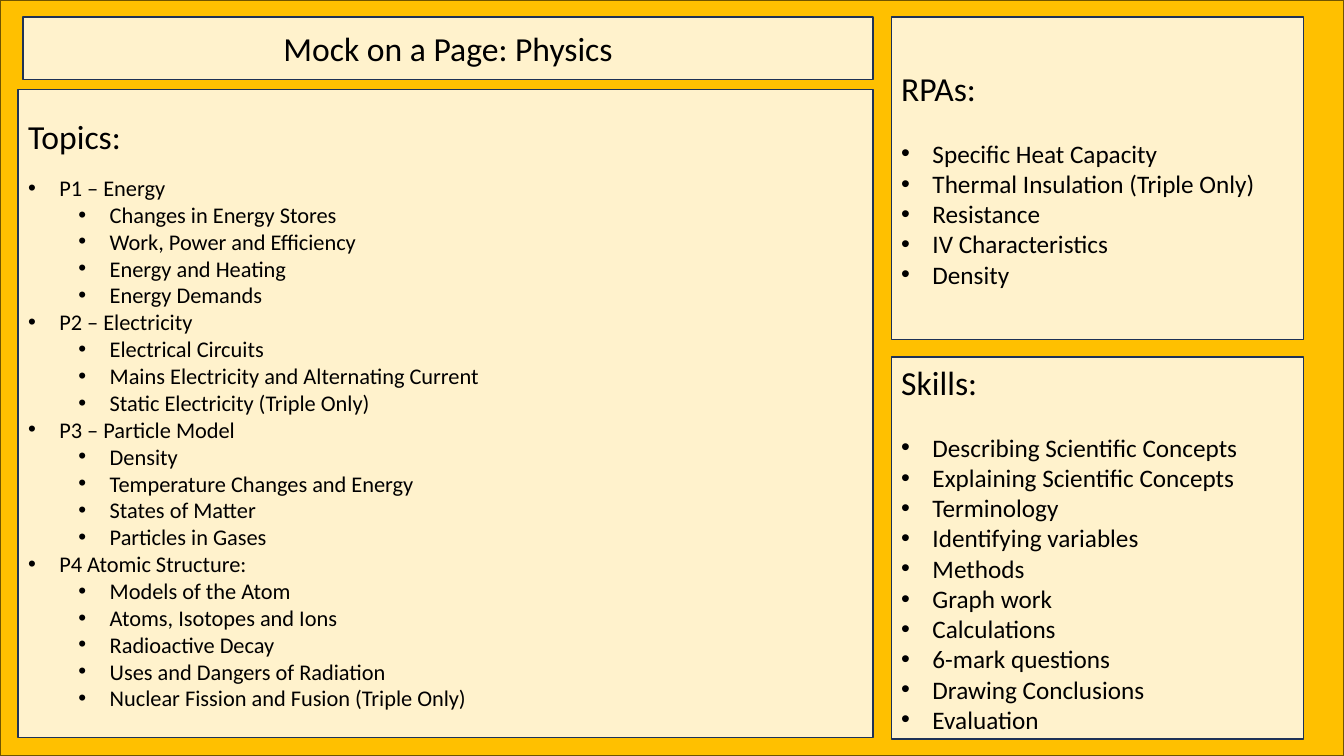
import pptx
import pptx.dml.color
import pptx.enum.shapes
import pptx.enum.text
import pptx.util
from lxml import etree
from pptx.util import Inches

COLOURS = {
    "frame": "FFC000",
    "frame_line": "705400",
    "panel": "FFF2CC",
    "panel_line": "1E3256",
    "text": "000000",
}
ALIGN = pptx.enum.text.PP_ALIGN
HANGING = 0.31
LEVEL_STEP = 0.5

TOPICS = {
    "P1 – Energy": [
        "Changes in Energy Stores",
        "Work, Power and Efficiency",
        "Energy and Heating",
        "Energy Demands",
    ],
    "P2 – Electricity": [
        "Electrical Circuits",
        "Mains Electricity and Alternating Current",
        "Static Electricity (Triple Only)",
    ],
    "P3 – Particle Model": [
        "Density",
        "Temperature Changes and Energy",
        "States of Matter",
        "Particles in Gases",
    ],
    "P4 Atomic Structure:": [
        "Models of the Atom",
        "Atoms, Isotopes and Ions",
        "Radioactive Decay",
        "Uses and Dangers of Radiation",
        "Nuclear Fission and Fusion (Triple Only)",
    ],
}
RPAS = [
    "Specific Heat Capacity",
    "Thermal Insulation (Triple Only)",
    "Resistance",
    "IV Characteristics",
    "Density",
]
SKILLS = [
    "Describing Scientific Concepts",
    "Explaining Scientific Concepts",
    "Terminology",
    "Identifying variables",
    "Methods",
    "Graph work",
    "Calculations",
    "6-mark questions",
    "Drawing Conclusions",
    "Evaluation",
]


def colour(name):
    """Return the named colour."""
    return pptx.dml.color.RGBColor.from_string(COLOURS[name])


def set_format(target, values):
    """Set each attribute of the target from a dict."""
    for name, value in values.items():
        setattr(target, name, value)


def add_box(page, place, kind):
    """Add a filled and outlined rectangle."""
    box = page.shapes.add_shape(
        pptx.enum.shapes.MSO_SHAPE.RECTANGLE, *map(Inches, place)
    )
    box.shadow.inherit = False
    box.fill.solid()
    box.fill.fore_color.rgb = colour(kind)
    box.line.color.rgb = colour(kind + "_line")
    box.line.width = pptx.util.Pt(1)
    return box


def write(para, text, size, align=ALIGN.LEFT, gap=0):
    """Write one styled paragraph with a gap below it in points."""
    set_format(para, {"alignment": align, "space_after": pptx.util.Pt(gap)})
    span = para.add_run()
    span.text = text
    set_format(span.font, {"name": "Calibri", "size": pptx.util.Pt(size)})
    span.font.color.rgb = colour("text")


def add_bullet(para, level):
    """Give a paragraph a round bullet and a hanging indent."""
    para.level = level
    properties = para._p.get_or_add_pPr()
    properties.set("marL", str(Inches(HANGING + LEVEL_STEP * level)))
    properties.set("indent", str(Inches(-HANGING)))
    for tag, key, value in (("a:buFont", "typeface", "Arial"), ("a:buChar", "char", "•")):
        etree.SubElement(properties, pptx.oxml.ns.qn(tag)).set(key, value)


def add_panel(page, place, heading, align=ALIGN.LEFT, items=(), size=18, gap=0):
    """Add a panel with a heading and (level, text) bullets."""
    frame = add_box(page, place, "panel").text_frame
    set_format(frame, {
        "word_wrap": True,
        "vertical_anchor": pptx.enum.text.MSO_ANCHOR.MIDDLE,
    })
    write(frame.paragraphs[0], heading, 24, align, gap)
    for level, text in items:
        para = frame.add_paragraph()
        write(para, text, size)
        add_bullet(para, level)


def main():
    """Build the revision page and save it."""
    deck = pptx.Presentation()
    set_format(deck, {"slide_width": Inches(13.33), "slide_height": Inches(7.5)})
    page = deck.slides.add_slide(deck.slide_layouts[6])

    topics = []
    for unit, parts in TOPICS.items():
        topics.append((0, unit))
        topics.extend((1, part) for part in parts)
    rpas = [(0, text) for text in RPAS]
    skills = [(0, text) for text in SKILLS]

    add_box(page, (0, 0, 13.33, 7.5), "frame")
    add_panel(page, (0.23, 0.17, 8.43, 0.62), "Mock on a Page: Physics", ALIGN.CENTER)
    add_panel(page, (8.84, 0.17, 4.09, 3.2), "RPAs:", items=rpas, gap=21.6)
    add_panel(page, (0.18, 0.89, 8.48, 6.43), "Topics:", items=topics, size=16, gap=12.6)
    add_panel(page, (8.84, 3.54, 4.09, 3.79), "Skills:", items=skills, gap=21.6)
    deck.save("out.pptx")


if __name__ == "__main__":
    main()
